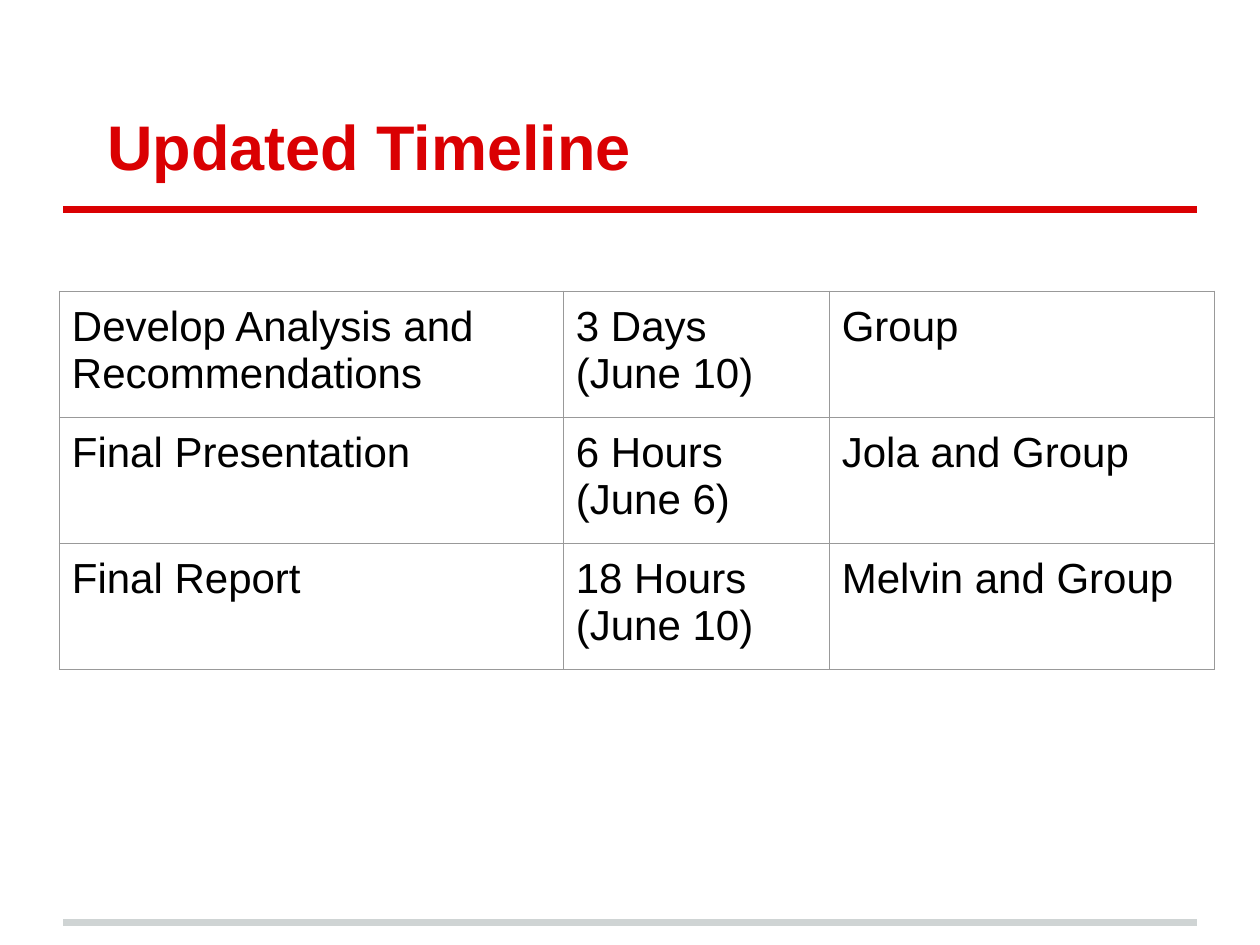
from dataclasses import dataclass

from lxml import etree
from pptx import Presentation
from pptx import util as u
from pptx.dml.color import RGBColor
from pptx.enum import shapes, text
from pptx.oxml.ns import qn
from pptx.slide import Slide

RED, GREY, BLACK, BORDER = "DA0002", "CFD4D4", "000000", "999999"
INSET = u.Cm(0.25)
MARGINS = {f"margin_{side}": INSET for side in ("left", "right", "top", "bottom")}
TITLE_FORMAT = {"name": "Arial", "size": u.Pt(36), "bold": True}
CELL_FORMAT = {"name": "Arial", "size": u.Pt(24), "bold": False}


@dataclass
class Rule:
    top: float
    color: str


RULES = [Rule(18.59, GREY), Rule(4.23, RED)]
COLUMN_WIDTHS = [10.16, 5.36, 7.77]
ROW_HEIGHT = 2.54
TASKS = [
    ("Develop Analysis and Recommendations", "3 Days (June 10)", "Group"),
    ("Final Presentation", "6 Hours (June 6)", "Jola and Group"),
    ("Final Report", "18 Hours (June 10)", "Melvin and Group"),
]


def rgb(value: str) -> RGBColor:
    return RGBColor.from_string(value)


def apply(target, values: dict) -> None:
    for name, value in values.items():
        setattr(target, name, value)


def write(para, wording: str, values: dict, color: str) -> None:
    span = para.add_run()
    span.text = wording
    apply(span.font, values)
    span.font.color.rgb = rgb(color)


def draw_rule(page: Slide, rule: Rule) -> None:
    line = page.shapes.add_connector(
        shapes.MSO_CONNECTOR.STRAIGHT,
        u.Cm(1.27), u.Cm(rule.top), u.Cm(24.13), u.Cm(rule.top),
    )
    line.line.color.rgb = rgb(rule.color)
    line.line.width = u.Pt(4)
    etree.SubElement(line._element.spPr, qn("a:effectLst"))


def draw_title(page: Slide, wording: str) -> None:
    box = page.shapes.add_textbox(u.Cm(1.27), u.Cm(0.76), u.Cm(22.86), u.Cm(3.18))
    frame = box.text_frame
    apply(frame, {**MARGINS, "word_wrap": True,
                  "vertical_anchor": text.MSO_ANCHOR.BOTTOM})
    para = frame.paragraphs[0]
    para._p.get_or_add_pPr().set("indent", str(u.Cm(0.64)))
    write(para, wording, TITLE_FORMAT, RED)


def draw_borders(cell) -> None:
    properties = cell._tc.get_or_add_tcPr()
    for side in "LRTB":
        edge = etree.SubElement(properties, qn(f"a:ln{side}"), w=str(u.Pt(0.75)))
        fill = etree.SubElement(edge, qn("a:solidFill"))
        etree.SubElement(fill, qn("a:srgbClr"), val=BORDER)


def draw_timeline(page: Slide) -> None:
    table = page.shapes.add_table(
        len(TASKS), len(COLUMN_WIDTHS), u.Cm(1.2), u.Cm(5.87),
        u.Cm(sum(COLUMN_WIDTHS)), u.Cm(ROW_HEIGHT * len(TASKS)),
    ).table
    apply(table, {"first_row": False, "horz_banding": False})
    for column, width in zip(table.columns, COLUMN_WIDTHS):
        column.width = u.Cm(width)
    for row, task in zip(table.rows, TASKS):
        row.height = u.Cm(ROW_HEIGHT)
        for cell, wording in zip(row.cells, task):
            apply(cell, MARGINS)
            draw_borders(cell)
            cell.fill.background()
            write(cell.text_frame.paragraphs[0], wording, CELL_FORMAT, BLACK)


def main() -> None:
    deck = Presentation()
    apply(deck, {"slide_width": u.Cm(25.4), "slide_height": u.Cm(19.05)})
    page = deck.slides.add_slide(deck.slide_layouts[6])
    for rule in RULES:
        draw_rule(page, rule)
    draw_title(page, "Updated Timeline")
    draw_timeline(page)
    deck.save("out.pptx")


if __name__ == "__main__":
    main()
